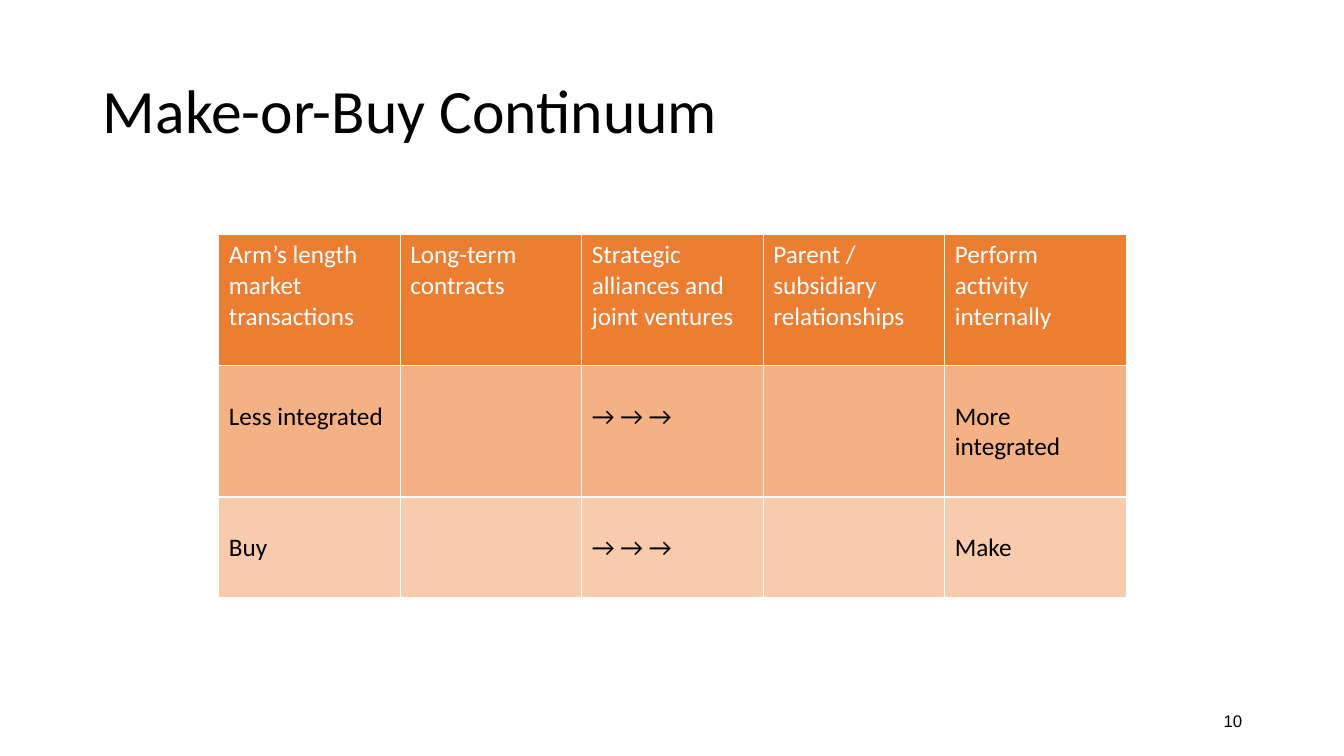
from dataclasses import dataclass

from lxml.etree import SubElement
from pptx import Presentation
from pptx.dml.color import RGBColor
from pptx.enum.text import MSO_ANCHOR as Anchor, PP_ALIGN as Align
from pptx.oxml.ns import qn
from pptx.slide import Slide
from pptx.table import _Cell as Cell
from pptx.text.text import TextFrame
from pptx.util import Inches, Pt

BLACK, WHITE = "000000", "FFFFFF"
COLUMN_WIDTH = 1.8


@dataclass
class Band:
    height: float
    fill: str
    color: str
    top_margin: float
    labels: list[str]


BANDS = [
    Band(1.3, "ED7D31", WHITE, 0.05, [
        "Arm’s length market transactions",
        "Long-term contracts",
        "Strategic alliances and joint ventures",
        "Parent / subsidiary relationships",
        "Perform activity internally",
    ]),
    Band(1.3, "F4B183", BLACK, 0.35, ["Less integrated", "", "→ → →", "", "More integrated"]),
    Band(1.0, "F8CBAD", BLACK, 0.35, ["Buy", "", "→ → →", "", "Make"]),
]


def rgb(value: str) -> RGBColor:
    return RGBColor.from_string(value)


def write(frame: TextFrame, text: str, font: str, size: int, color: str,
          align: Align = Align.LEFT) -> None:
    frame.word_wrap = True
    para = frame.paragraphs[0]
    para.text = text
    para.alignment = align
    para.font.name = font
    para.font.size = Pt(size)
    para.font.color.rgb = rgb(color)


def add_borders(cell: Cell, color: str, width: float) -> None:
    properties = cell._tc.get_or_add_tcPr()
    for position, side in enumerate(("lnL", "lnR", "lnT", "lnB")):
        line = properties.makeelement(qn(f"a:{side}"), {"w": str(Pt(width))})
        fill = SubElement(line, qn("a:solidFill"))
        SubElement(fill, qn("a:srgbClr"), val=color)
        properties.insert(position, line)


def add_title(page: Slide) -> None:
    title = page.shapes.title
    title.left, title.top = Inches(0.92), Inches(0.4)
    title.width, title.height = Inches(11.5), Inches(1.45)
    write(title.text_frame, "Make-or-Buy Continuum", "Calibri", 44, BLACK)
    title.text_frame.vertical_anchor = Anchor.MIDDLE
    title.text_frame.paragraphs[0].line_spacing = 0.9


def add_continuum(page: Slide) -> None:
    columns = len(BANDS[0].labels)
    height = sum(band.height for band in BANDS)
    table = page.shapes.add_table(
        len(BANDS), columns, Inches(2.17), Inches(2.33),
        Inches(columns * COLUMN_WIDTH), Inches(height)).table
    for column in table.columns:
        column.width = Inches(COLUMN_WIDTH)
    for row, band in zip(table.rows, BANDS):
        row.height = Inches(band.height)
        for cell, label in zip(row.cells, band.labels):
            cell.fill.solid()
            cell.fill.fore_color.rgb = rgb(band.fill)
            cell.margin_top = Inches(band.top_margin)
            write(cell.text_frame, label, "Calibri", 18, band.color)
            cell.text_frame.paragraphs[0].font.bold = False
            add_borders(cell, WHITE, 1)


def add_page_number(page: Slide) -> None:
    box = page.shapes.add_textbox(Inches(9.42), Inches(6.95), Inches(3), Inches(0.4))
    write(box.text_frame, "10", "Arial", 12, BLACK, Align.RIGHT)
    box.text_frame.vertical_anchor = Anchor.MIDDLE


def main() -> None:
    deck = Presentation()
    deck.slide_width, deck.slide_height = Inches(13.33), Inches(7.5)
    page = deck.slides.add_slide(deck.slide_layouts.get_by_name("Title Only"))
    add_title(page)
    add_continuum(page)
    add_page_number(page)
    deck.save("out.pptx")


if __name__ == "__main__":
    main()
